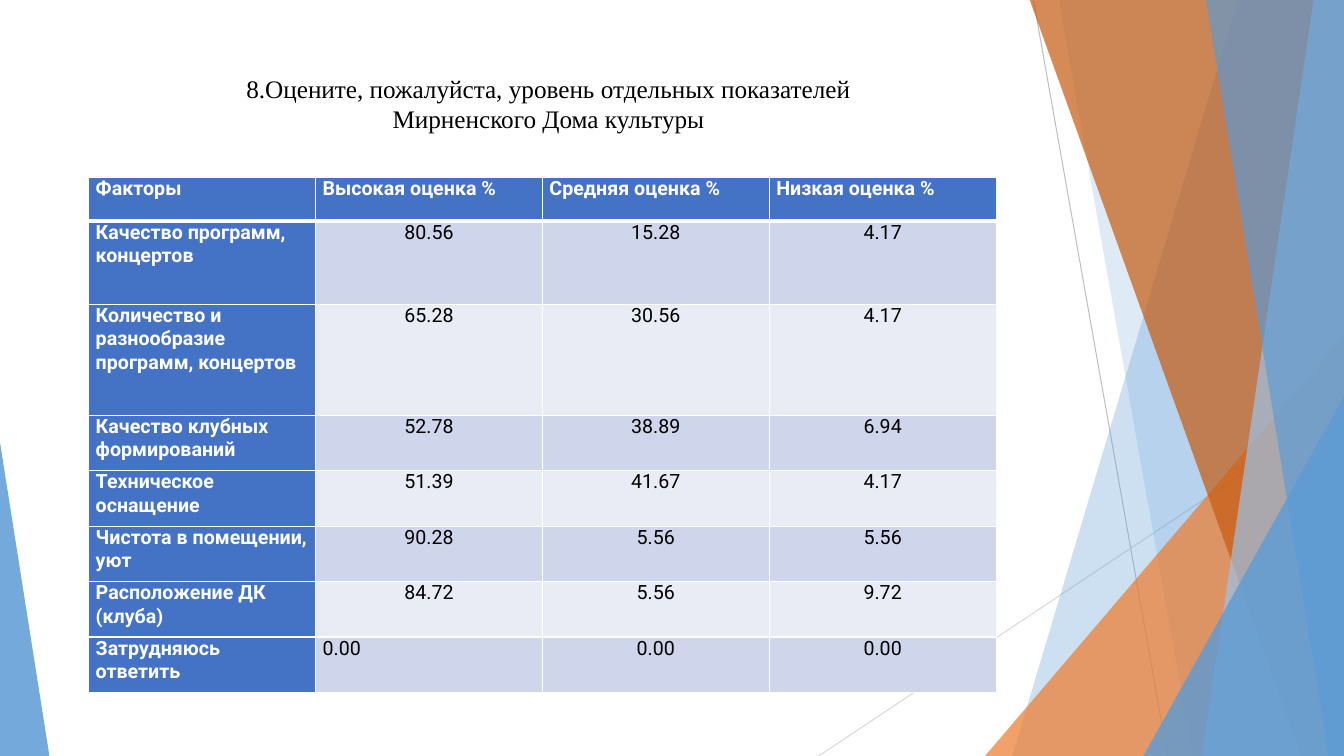
from lxml.etree import SubElement
from pptx import Presentation
from pptx.dml.color import RGBColor
from pptx.enum.shapes import MSO_CONNECTOR as Connector
from pptx.enum.shapes import MSO_SHAPE as Shape
from pptx.enum.text import MSO_ANCHOR as Anchor
from pptx.enum.text import PP_ALIGN as Align
from pptx.oxml.ns import qn
from pptx.util import Pt

PX = 9144
SLIDE_WIDTH, SLIDE_HEIGHT = 1333, 750

WHITE = RGBColor(0xFF, 0xFF, 0xFF)
BLACK = RGBColor(0x00, 0x00, 0x00)
GRAY = RGBColor(0xBF, 0xBF, 0xBF)
LIGHT_GRAY = RGBColor(0xD9, 0xD9, 0xD9)
BLUE = RGBColor(0x5B, 0x9B, 0xD5)
LIGHT_BLUE = RGBColor(0x9D, 0xC3, 0xE6)
ORANGE = RGBColor(0xED, 0x7D, 0x31)
DARK_ORANGE = RGBColor(0xC5, 0x5A, 0x11)
HEADER_BLUE = RGBColor(0x44, 0x72, 0xC4)
BANDS = (RGBColor(0xCF, 0xD5, 0xEA), RGBColor(0xE9, 0xEB, 0xF5))

TITLE = "8.Оцените, пожалуйста, уровень отдельных показателей\vМирненского Дома культуры"
RATINGS = [
    ("Факторы", "Высокая оценка %", "Средняя оценка %", "Низкая оценка %"),
    ("Качество программ, концертов", "80.56", "15.28", "4.17"),
    ("Количество и разнообразие программ, концертов", "65.28", "30.56", "4.17"),
    ("Качество клубных формирований", "52.78", "38.89", "6.94"),
    ("Техническое оснащение", "51.39", "41.67", "4.17"),
    ("Чистота в помещении, уют", "90.28", "5.56", "5.56"),
    ("Расположение ДК (клуба)", "84.72", "5.56", "9.72"),
    ("Затрудняюсь ответить", "0.00", "0.00", "0.00"),
]
COLUMN_WIDTH = 225
ROW_HEIGHTS = [43, 83, 110] + [55] * 5


def px(*lengths):
    return [length * PX for length in lengths]


def write_text(frame, text, *, size, font, color, bold=False, align=Align.LEFT):
    frame.word_wrap = True
    paragraph = frame.paragraphs[0]
    paragraph.text = text
    paragraph.alignment = align
    paragraph.font.size = Pt(size)
    paragraph.font.name = font
    paragraph.font.bold = bold
    paragraph.font.color.rgb = color
    for run in paragraph.runs:
        run.font.size = Pt(size)
        run.font.name = font
        run.font.bold = bold
        run.font.color.rgb = color


def paint(shape, color, opacity):
    shape.shadow.inherit = False
    shape.line.fill.background()
    shape.fill.solid()
    shape.fill.fore_color.rgb = color
    color_element = shape.fill._xPr.find(qn("a:solidFill"))[0]
    SubElement(color_element, qn("a:alpha"), val=str(opacity * 1000))


def add_line(slide, start, end, color):
    line = slide.shapes.add_connector(Connector.STRAIGHT, *px(*start, *end))
    line.line.color.rgb = color
    line.line.width = Pt(0.75)
    SubElement(line._element.spPr, qn("a:effectLst"))


def add_right_panel(slide, top_x, bottom_x, color, opacity):
    builder = slide.shapes.build_freeform(top_x, -1, scale=PX)
    builder.add_line_segments(
        [(SLIDE_WIDTH, -1), (SLIDE_WIDTH, SLIDE_HEIGHT), (bottom_x, SLIDE_HEIGHT)]
    )
    paint(builder.convert_to_shape(), color, opacity)


def add_corner_triangle(slide, left, top, width, apex, color, opacity):
    triangle = slide.shapes.add_shape(
        Shape.ISOSCELES_TRIANGLE, *px(left, top, width, SLIDE_HEIGHT - top)
    )
    triangle.adjustments[0] = apex
    paint(triangle, color, opacity)


def add_background(slide):
    add_line(slide, (1025, 0), (1158, 750), GRAY)
    add_line(slide, (1333, 403), (812, 750), LIGHT_GRAY)
    add_right_panel(slide, 1228, 1004, BLUE, 30)
    add_right_panel(slide, 1050, 1183, BLUE, 20)
    add_corner_triangle(slide, 977, 333, 356, 1, ORANGE, 72)
    add_right_panel(slide, 1021, 1291, DARK_ORANGE, 70)
    add_right_panel(slide, 1303, 1192, LIGHT_BLUE, 70)
    add_right_panel(slide, 1196, 1318, BLUE, 65)
    add_corner_triangle(slide, 1134, 393, 199, 1, BLUE, 80)
    add_corner_triangle(slide, 0, 439, 49, 0, BLUE, 85)


def add_title(slide):
    box = slide.shapes.add_textbox(*px(74, 67, 940, 71))
    box.text_frame.vertical_anchor = Anchor.MIDDLE
    write_text(box.text_frame, TITLE, size=18, font="Times New Roman",
               color=BLACK, align=Align.CENTER)


def set_borders(cell, **widths):
    properties = cell._tc.get_or_add_tcPr()
    for side in ("L", "R", "T", "B"):
        width = Pt(widths.get(side, 1))
        line = SubElement(properties, qn(f"a:ln{side}"), w=str(width))
        fill = SubElement(line, qn("a:solidFill"))
        SubElement(fill, qn("a:srgbClr"), val=str(WHITE))


def fill_cell(cell, text, row, column):
    is_heading = row == 0 or column == 0
    is_left = is_heading or (row == len(RATINGS) - 1 and column == 1)
    cell.margin_left, cell.margin_right = px(7, 7)
    cell.margin_top = cell.margin_bottom = 0
    set_borders(cell, T=3 if row == 1 else 1, B=3 if row == 0 else 1)
    cell.fill.solid()
    cell.fill.fore_color.rgb = HEADER_BLUE if is_heading else BANDS[(row - 1) % 2]
    write_text(cell.text_frame, text, size=14, font="Roboto", bold=is_heading,
               color=WHITE if is_heading else BLACK,
               align=Align.LEFT if is_left else Align.CENTER)


def add_ratings_table(slide):
    columns = len(RATINGS[0])
    table = slide.shapes.add_table(
        len(RATINGS), columns,
        *px(88, 176, COLUMN_WIDTH * columns, sum(ROW_HEIGHTS)),
    ).table
    for column in table.columns:
        column.width = COLUMN_WIDTH * PX
    for row, height in zip(table.rows, ROW_HEIGHTS):
        row.height = height * PX
    for row, texts in enumerate(RATINGS):
        for column, text in enumerate(texts):
            fill_cell(table.cell(row, column), text, row, column)


def main():
    presentation = Presentation()
    presentation.slide_width, presentation.slide_height = px(SLIDE_WIDTH, SLIDE_HEIGHT)
    slide = presentation.slides.add_slide(presentation.slide_layouts[6])
    add_background(slide)
    add_title(slide)
    add_ratings_table(slide)
    presentation.save("out.pptx")


if __name__ == "__main__":
    main()
